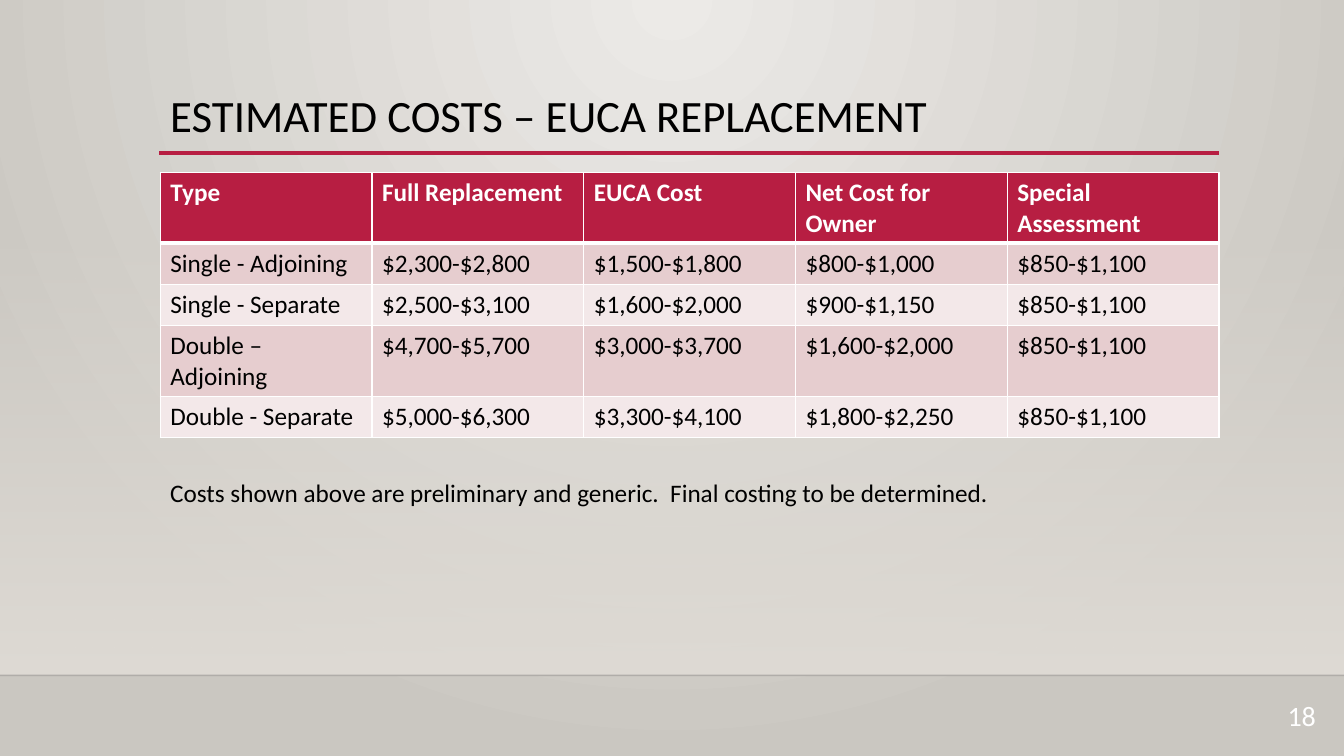
from lxml import etree
from pptx import Presentation
from pptx.dml.color import RGBColor
from pptx.enum.shapes import MSO_CONNECTOR as Connector, MSO_SHAPE as Shape
from pptx.enum.text import PP_ALIGN as Align
from pptx.oxml import parse_xml
from pptx.oxml.ns import nsdecls, qn
from pptx.util import Inches, Pt

COLORS = {
    "accent": "B71E42", "band_dark": "E6CDCF", "band_light": "F3E8E9",
    "white": "FFFFFF", "text": "000000", "floor": "DFDBD5",
    "floor_edge": "000001", "glow": "ECEAE7", "backdrop": "CAC7C1",
}
FONT = "Calibri"
SLIDE_W, SLIDE_H = 13.33, 7.5
FLOOR_TOP, FLOOR_EDGE = 2.21, 6.7
LEFT, CONTENT_W = 1.59, 10.5

COSTS = [
    ["Type", "Full Replacement", "EUCA Cost", "Net Cost for Owner", "Special Assessment"],
    ["Single - Adjoining", "$2,300-$2,800", "$1,500-$1,800", "$800-$1,000", "$850-$1,100"],
    ["Single - Separate", "$2,500-$3,100", "$1,600-$2,000", "$900-$1,150", "$850-$1,100"],
    ["Double – Adjoining", "$4,700-$5,700", "$3,000-$3,700", "$1,600-$2,000", "$850-$1,100"],
    ["Double - Separate", "$5,000-$6,300", "$3,300-$4,100", "$1,800-$2,250", "$850-$1,100"],
]
ROW_HEIGHTS = [0.7, 0.41, 0.41, 0.7, 0.41]


def rgb(name):
    return RGBColor.from_string(COLORS[name])


def write(frame, text, size=18, color="text", bold=False, align=Align.LEFT, spacing=None):
    frame.word_wrap = True
    paragraph = frame.paragraphs[0]
    paragraph.alignment = align
    if spacing:
        paragraph.line_spacing = spacing
    run = paragraph.add_run()
    run.text = text
    run.font.name, run.font.size, run.font.bold = FONT, Pt(size), bold
    run.font.color.rgb = rgb(color)


def add_text(slide, box, text, **style):
    label = slide.shapes.add_textbox(*map(Inches, box))
    write(label.text_frame, text, **style)


def set_gradient(fill, owner, stops, direction):
    """Give the fill of owner (name, opacity %) stops and a direction element."""
    fill.gradient()
    gradient = next(owner.element.iter(qn("a:gradFill")))
    marks = "".join(
        f'<a:gs pos="{i * 100000}"><a:srgbClr val="{COLORS[name]}">'
        f'<a:alpha val="{opacity * 1000}"/></a:srgbClr></a:gs>'
        for i, (name, opacity) in enumerate(stops))
    gradient.getparent().replace(gradient, parse_xml(
        f'<a:gradFill {nsdecls("a")} rotWithShape="1">'
        f"<a:gsLst>{marks}</a:gsLst>{direction}</a:gradFill>"))


def add_rule(slide, x1, x2, y, color, width, opacity=100):
    rule = slide.shapes.add_connector(
        Connector.STRAIGHT, Inches(x1), Inches(y), Inches(x2), Inches(y))
    rule.line.color.rgb = rgb(color)
    rule.line.width = Pt(width)
    if opacity < 100:
        tint = next(rule.element.iter(qn("a:srgbClr")))
        etree.SubElement(tint, qn("a:alpha")).set("val", str(opacity * 1000))
    etree.SubElement(rule.element.spPr, qn("a:effectLst"))


def add_backdrop(slide):
    set_gradient(slide.background.fill, slide, [("glow", 100), ("backdrop", 100)],
                 '<a:path path="circle">'
                 '<a:fillToRect l="43000" t="0" r="43000" b="100000"/></a:path>')
    floor = slide.shapes.add_shape(
        Shape.RECTANGLE, 0, Inches(FLOOR_TOP),
        Inches(SLIDE_W), Inches(FLOOR_EDGE - FLOOR_TOP))
    floor.shadow.inherit = False
    floor.line.fill.background()
    set_gradient(floor.fill, floor, [("floor", 0), ("floor", 100)],
                 '<a:lin ang="5400000" scaled="0"/>')
    add_rule(slide, 0, SLIDE_W, FLOOR_EDGE, "floor_edge", 1, opacity=20)


def add_heading(slide, box, text):
    left, top, width, _ = box
    add_rule(slide, left - 0.01, left + width, top + 0.64, "accent", 2.5)
    add_text(slide, box, text, size=32, spacing=0.9)


def set_borders(cell, top, bottom):
    """Draw white cell borders; top and bottom are widths in points."""
    properties = cell._tc.get_or_add_tcPr()
    widths = {"lnL": 1, "lnR": 1, "lnT": top, "lnB": bottom}
    for i, (side, width) in enumerate(widths.items()):
        properties.insert(i, parse_xml(
            f'<a:{side} {nsdecls("a")} w="{Pt(width)}"><a:solidFill>'
            f'<a:srgbClr val="{COLORS["white"]}"/></a:solidFill></a:{side}>'))


def add_cost_table(slide, left, top, width):
    costs = slide.shapes.add_table(
        len(COSTS), len(COSTS[0]), Inches(left), Inches(top),
        Inches(width), Inches(sum(ROW_HEIGHTS))).table
    for column in costs.columns:
        column.width = Inches(width / len(COSTS[0]))
    for r, (values, height) in enumerate(zip(COSTS, ROW_HEIGHTS)):
        costs.rows[r].height = Inches(height)
        header = r == 0
        band = "accent" if header else "band_dark" if r % 2 else "band_light"
        for c, value in enumerate(values):
            cell = costs.cell(r, c)
            cell.fill.solid()
            cell.fill.fore_color.rgb = rgb(band)
            set_borders(cell, top=3 if r == 1 else 1, bottom=3 if header else 1)
            write(cell.text_frame, value, bold=header,
                  color="white" if header else "text")


def main():
    deck = Presentation()
    deck.slide_width, deck.slide_height = Inches(SLIDE_W), Inches(SLIDE_H)
    slide = deck.slides.add_slide(deck.slide_layouts[6])
    add_backdrop(slide)
    add_heading(slide, (LEFT, 0.88, CONTENT_W, 0.83), "ESTIMATED COSTS – EUCA REPLACEMENT")
    add_cost_table(slide, LEFT, 1.71, CONTENT_W)
    add_text(slide, (LEFT, 4.69, CONTENT_W, 0.71),
             "Costs shown above are preliminary and generic.  Final costing to be determined.")
    add_text(slide, (12.4, 6.88, 0.75, 0.5), "18", size=20, color="white", align=Align.RIGHT)
    deck.save("out.pptx")


if __name__ == "__main__":
    main()
